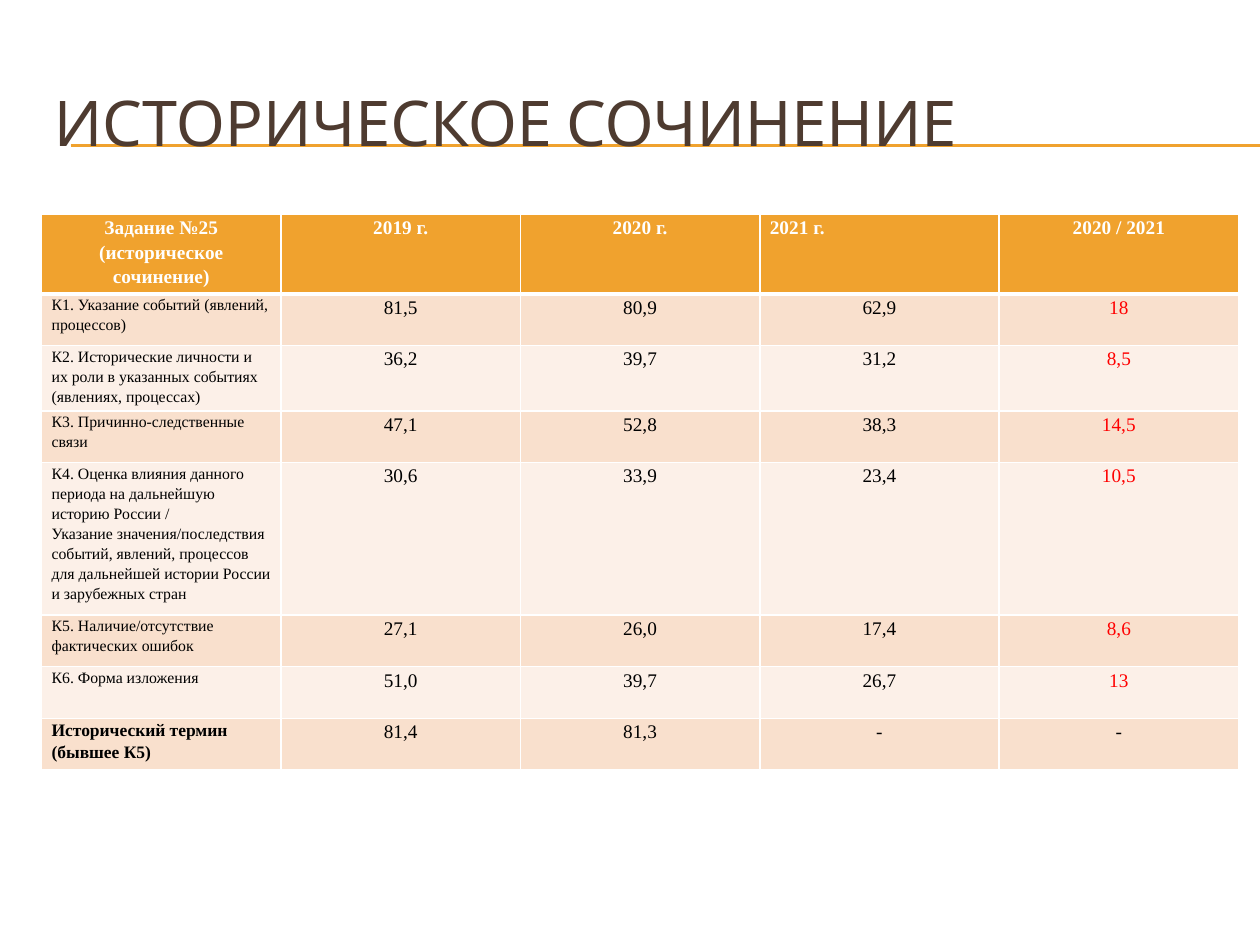
from typing import NamedTuple

from lxml.etree import SubElement
from pptx import Presentation
from pptx.dml.color import RGBColor
from pptx.enum.shapes import MSO_CONNECTOR
from pptx.enum.text import MSO_ANCHOR, PP_ALIGN
from pptx.oxml.ns import qn
from pptx.util import Inches, Pt

ORANGE, WHITE, BLACK, RED, BROWN = "F0A22E", "FFFFFF", "000000", "FF0000", "4E3B30"
BANDS = ("F9E0CD", "FCF0E8")
BODY_FONT = "Times New Roman"


class TextStyle(NamedTuple):
    size: float
    color: str = BLACK
    bold: bool = False
    align: PP_ALIGN = PP_ALIGN.CENTER


class Criterion(NamedTuple):
    name: str
    values: tuple[str, str, str]
    change: str


HEADINGS = ("Задание №25 (историческое сочинение)", "2019 г.", "2020 г.", "2021 г.", "2020 / 2021")
CRITERIA = (
    Criterion("К1. Указание событий (явлений, процессов)", ("81,5", "80,9", "62,9"), "18"),
    Criterion("К2. Исторические личности и их роли в указанных событиях (явлениях, процессах)",
              ("36,2", "39,7", "31,2"), "8,5"),
    Criterion("К3. Причинно-следственные связи", ("47,1", "52,8", "38,3"), "14,5"),
    Criterion("К4. Оценка влияния данного периода на дальнейшую историю России /\n"
              "Указание значения/последствия событий, явлений, процессов для дальнейшей "
              "истории России и зарубежных стран", ("30,6", "33,9", "23,4"), "10,5"),
    Criterion("К5. Наличие/отсутствие фактических ошибок", ("27,1", "26,0", "17,4"), "8,6"),
    Criterion("К6. Форма изложения", ("51,0", "39,7", "26,7"), "13"),
    Criterion("Исторический термин (бывшее К5)", ("81,4", "81,3", "-"), "-"),
)

HEADER = TextStyle(11, WHITE, True)
HEADER_LEFT = HEADER._replace(align=PP_ALIGN.LEFT)
NAME = TextStyle(9, align=PP_ALIGN.LEFT)
TERM_NAME = TextStyle(10, bold=True, align=PP_ALIGN.LEFT)
VALUE = TextStyle(11)
CHANGE = TextStyle(11, RED)


def rgb(color: str) -> RGBColor:
    return RGBColor.from_string(color)


def style_text(frame, style: TextStyle, font: str, spacing: float) -> None:
    for para in frame.paragraphs:
        para.alignment = style.align
        para.line_spacing = spacing
        for span in para.runs:
            span.font.name = font
            span.font.size = Pt(style.size)
            span.font.bold = style.bold
            span.font.color.rgb = rgb(style.color)


def add_rule(page, y: float) -> None:
    rule = page.shapes.add_connector(
        MSO_CONNECTOR.STRAIGHT, Inches(0.56), Inches(y), Inches(10), Inches(y))
    rule.line.color.rgb = rgb(ORANGE)
    rule.line.width = Pt(0.75)
    SubElement(rule._element.spPr, qn("a:effectLst"))


def add_title(page, text: str) -> None:
    box = page.shapes.add_textbox(Inches(0.33), Inches(0.5), Inches(9.5), Inches(0.92))
    frame = box.text_frame
    frame.word_wrap = True
    frame.vertical_anchor = MSO_ANCHOR.MIDDLE
    frame.text = text
    style_text(frame, TextStyle(36, BROWN, align=PP_ALIGN.LEFT), "Cabin", 1)


def set_borders(cell, top: float, bottom: float) -> None:
    """Draw white cell borders; the side ones are 1 pt wide."""
    properties = cell._tc.get_or_add_tcPr()
    for side, width in (("L", 1), ("R", 1), ("T", top), ("B", bottom)):
        line = SubElement(properties, qn(f"a:ln{side}"), w=str(Pt(width)))
        SubElement(SubElement(line, qn("a:solidFill")), qn("a:srgbClr"), val=WHITE)


def fill_cell(cell, text: str, style: TextStyle, fill: str) -> None:
    cell.margin_left = cell.margin_right = Inches(0.08)
    cell.margin_top = cell.margin_bottom = 0
    cell.text_frame.text = text
    style_text(cell.text_frame, style, BODY_FONT, 1.15)
    cell.fill.solid()
    cell.fill.fore_color.rgb = rgb(fill)


def table_rows() -> list[list[tuple[str, TextStyle]]]:
    """Pair the text of every cell with its style, row by row."""
    rows = [[(text, HEADER_LEFT if text == "2021 г." else HEADER) for text in HEADINGS]]
    for criterion in CRITERIA:
        is_term = criterion is CRITERIA[-1]
        rows.append([
            (criterion.name, TERM_NAME if is_term else NAME),
            *((value, VALUE) for value in criterion.values),
            (criterion.change, VALUE if is_term else CHANGE),
        ])
    return rows


def add_score_table(page) -> None:
    rows = table_rows()
    row_height = Inches(0.41)
    table = page.shapes.add_table(
        len(rows), len(HEADINGS), Inches(0.33), Inches(1.7),
        Inches(9.5), row_height * len(rows)).table
    for row_index, row in enumerate(rows):
        table.rows[row_index].height = row_height
        fill = BANDS[(row_index - 1) % 2] if row_index else ORANGE
        for column_index, (text, style) in enumerate(row):
            cell = table.cell(row_index, column_index)
            set_borders(cell, top=3 if row_index == 1 else 1, bottom=1 if row_index else 3)
            fill_cell(cell, text, style, fill)


def main() -> None:
    deck = Presentation()
    deck.slide_width, deck.slide_height = Inches(10), Inches(7.5)
    page = deck.slides.add_slide(deck.slide_layouts[6])
    for y in (1.15, 1.16):
        add_rule(page, y)
    add_title(page, "ИСТОРИЧЕСКОЕ СОЧИНЕНИЕ")
    add_score_table(page)
    deck.save("out.pptx")


if __name__ == "__main__":
    main()
